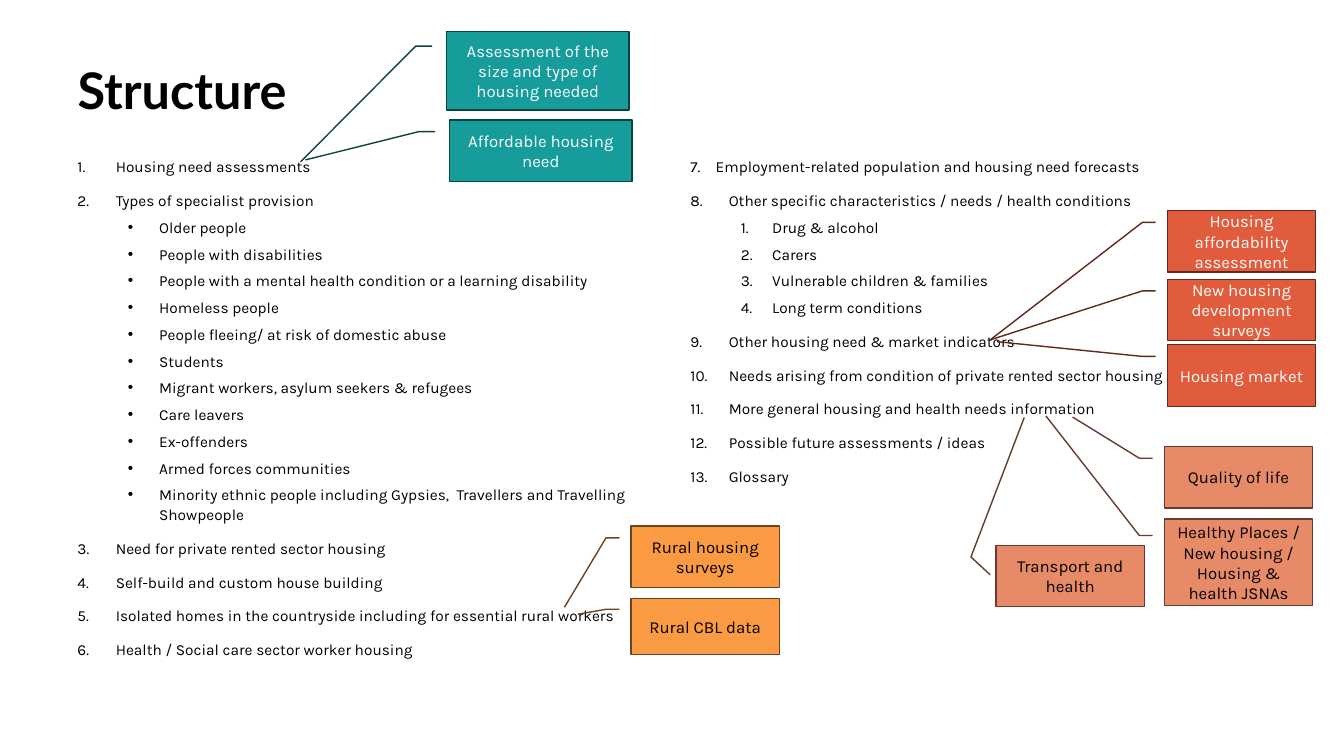
from lxml import etree
from pptx import Presentation
from pptx.dml.color import RGBColor
from pptx.enum.shapes import MSO_SHAPE
from pptx.enum.text import MSO_ANCHOR, PP_ALIGN
from pptx.oxml.ns import qn
from pptx.util import Inches, Pt

CALLOUT = MSO_SHAPE.LINE_CALLOUT_2
TOP, MIDDLE = MSO_ANCHOR.TOP, MSO_ANCHOR.MIDDLE
CENTER, LEFT = PP_ALIGN.CENTER, PP_ALIGN.LEFT

TITLE = "Structure"
LEFT_ITEMS = [
    ("Housing need assessments", []),
    ("Types of specialist provision", [
        "Older people",
        "People with disabilities",
        "People with a mental health condition or a learning disability",
        "Homeless people",
        "People fleeing/ at risk of domestic abuse",
        "Students",
        "Migrant workers, asylum seekers & refugees",
        "Care leavers",
        "Ex-offenders",
        "Armed forces communities",
        "Minority ethnic people including Gypsies,  Travellers and Travelling Showpeople",
    ]),
    ("Need for private rented sector housing", []),
    ("Self-build and custom house building", []),
    ("Isolated homes in the countryside including for essential rural workers", []),
    ("Health / Social care sector worker housing", []),
]
RIGHT_ITEMS = [
    ("Employment-related population and housing need forecasts", []),
    ("Other specific characteristics / needs / health conditions", [
        "Drug & alcohol",
        "Carers",
        "Vulnerable children & families",
        "Long term conditions",
    ]),
    ("Other housing need & market indicators", []),
    ("Needs arising from condition of private rented sector housing", []),
    ("More general housing and health needs information", []),
    ("Possible future assessments / ideas", []),
    ("Glossary", []),
]
COLUMNS = [
    {"items": LEFT_ITEMS, "box": (0.67, 1.5, 5.67, 5.73), "start": 1,
     "first_indent": 0.38, "sub_bullet": "•"},
    {"items": RIGHT_ITEMS, "box": (6.75, 1.5, 5.67, 5.26), "start": 7,
     "first_indent": 0.25, "sub_bullet": None},
]

NEAR = (0.19, -0.08)
STYLES = {
    "need": ("169C9A", "0A4443", "FFFFFF"),
    "rural": ("FA9A42", "6E431D", "000000"),
    "market": ("E15C3D", "63281B", "FFFFFF"),
    "health": ("E78A67", "653C2D", "000000"),
}
CALLOUTS = [
    ("need", "Assessment of the size and type of housing needed",
     (4.43, 0.31, 1.81, 0.78), NEAR, (1.66, -0.8)),
    ("need", "Affordable housing need",
     (4.46, 1.19, 1.81, 0.61), NEAR, (0.65, -0.79)),
    ("rural", "Rural housing surveys",
     (6.26, 5.22, 1.47, 0.61), NEAR, (1.32, -0.45)),
    ("rural", "Rural CBL data",
     (6.26, 5.94, 1.47, 0.55), NEAR, (0.28, -0.36)),
    ("market", "Housing affordability assessment",
     (11.58, 2.09, 1.47, 0.61), NEAR, (2.09, -1.19)),
    ("market", "New housing development surveys",
     (11.58, 2.77, 1.47, 0.61), NEAR, (0.99, -1.2)),
    ("market", "Housing market",
     (11.58, 3.42, 1.47, 0.61), NEAR, (-0.05, -1.15)),
    ("health", "Quality of life",
     (11.55, 4.43, 1.47, 0.61), NEAR, (-0.48, -0.62)),
    ("health", "Healthy Places / New housing / Housing & health JSNAs",
     (11.55, 5.15, 1.47, 0.86), NEAR, (-1.19, -0.8)),
    ("health", "Transport and health",
     (9.88, 5.41, 1.47, 0.61), (0.48, -0.04), (-2.08, 0.19)),
]
ELBOW = (0.19, -0.17)


def rgb(value):
    return RGBColor.from_string(value)


def set_all(obj, values):
    for name, value in values.items():
        setattr(obj, name, value)


def inches(box):
    return [Inches(v) for v in box]


def add_run(p, text, size, color, font="Karla", bold=False):
    r = p.add_run()
    r.text = text
    set_all(r.font, {"name": font, "size": Pt(size), "bold": bold})
    r.font.color.rgb = rgb(color)


def add_bullet(p, indent, hanging, char=None, start=1):
    pPr = p._p.get_or_add_pPr()
    pPr.set("marL", str(Inches(indent)))
    pPr.set("indent", str(-Inches(hanging)))
    if char:
        etree.SubElement(pPr, qn("a:buFont")).set("typeface", "Arial")
        etree.SubElement(pPr, qn("a:buChar")).set("char", char)
        return
    number = etree.SubElement(pPr, qn("a:buAutoNum"))
    number.set("type", "arabicPeriod")
    if start > 1:
        number.set("startAt", str(start))


def add_column(slide, column):
    tf = slide.shapes.add_textbox(*inches(column["box"])).text_frame
    set_all(tf, {"word_wrap": True, "vertical_anchor": TOP})
    lines = []
    for i, (heading, children) in enumerate(column["items"]):
        indent = column["first_indent"] if i == 0 else 0.38
        lines.append((heading, 0, 10, (indent, indent, None, column["start"])))
        lines += [(child, 1, 5, (0.81, 0.31, column["sub_bullet"])) for child in children]
    for i, (text, level, before, bullet) in enumerate(lines):
        p = tf.add_paragraph() if i else tf.paragraphs[0]
        set_all(p, {"level": level, "line_spacing": 1.07, "space_before": Pt(before)})
        add_bullet(p, *bullet)
        add_run(p, text, 11, "000000")


def add_callout(slide, style, text, box, start, end):
    fill, line, color = STYLES[style]
    sp = slide.shapes.add_shape(CALLOUT, *inches(box))
    for i, value in enumerate(start + ELBOW + end):
        sp.adjustments[i] = value
    sp.shadow.inherit = False
    sp.fill.solid()
    sp.fill.fore_color.rgb = rgb(fill)
    sp.line.color.rgb = rgb(line)
    sp.line.width = Pt(1)
    tf = sp.text_frame
    set_all(tf, {"word_wrap": True, "vertical_anchor": MIDDLE})
    p = tf.paragraphs[0]
    p.alignment = CENTER
    add_run(p, text, 12, color)


def main():
    prs = Presentation()
    set_all(prs, {"slide_width": Inches(13.33), "slide_height": Inches(7.5)})
    slide = prs.slides.add_slide(prs.slide_layouts[5])

    title = slide.shapes.title
    set_all(title, dict(zip(("left", "top", "width", "height"),
                            inches((0.67, 0.6, 11.75, 0.78)))))
    set_all(title.text_frame, {"word_wrap": True, "vertical_anchor": TOP})
    p = title.text_frame.paragraphs[0]
    set_all(p, {"alignment": LEFT, "line_spacing": 0.9})
    add_run(p, TITLE, 36, "000000", "Lato", True)

    for column in COLUMNS:
        add_column(slide, column)
    for callout in CALLOUTS:
        add_callout(slide, *callout)
    prs.save("out.pptx")


if __name__ == "__main__":
    main()
